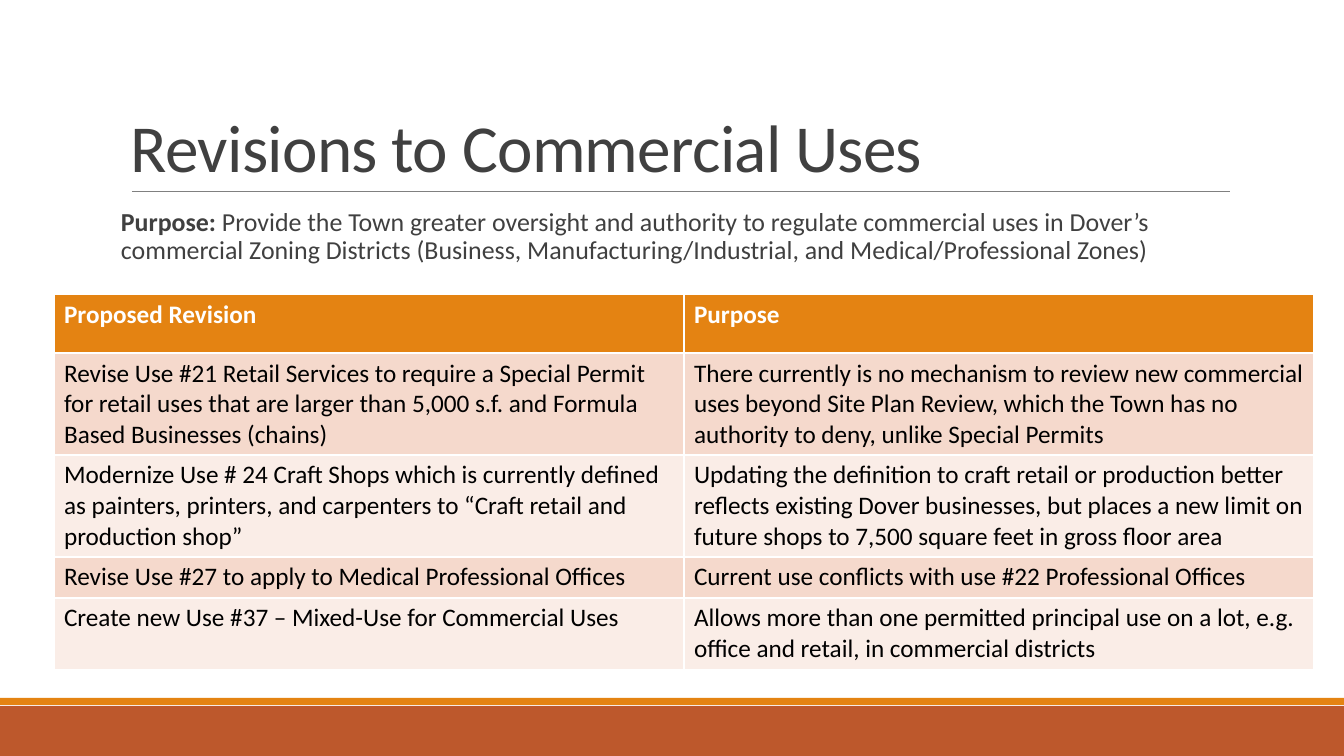
from lxml import etree
from pptx import Presentation
from pptx.dml.color import RGBColor
from pptx.enum.shapes import MSO_CONNECTOR, MSO_SHAPE
from pptx.enum.text import MSO_ANCHOR
from pptx.oxml.ns import qn
from pptx.util import Pt

STRAIGHT = MSO_CONNECTOR.STRAIGHT
RECTANGLE = MSO_SHAPE.RECTANGLE
BOTTOM = MSO_ANCHOR.BOTTOM

WHITE = RGBColor(0xFF, 0xFF, 0xFF)
BLACK = RGBColor(0, 0, 0)
CHARCOAL = RGBColor(0x40, 0x40, 0x40)
GRAY = RGBColor(0x80, 0x80, 0x80)
ORANGE = RGBColor(0xE4, 0x83, 0x12)
RUST = RGBColor(0xBD, 0x58, 0x2C)
DARK_BAND = RGBColor(0xF5, 0xD9, 0xCC)
LIGHT_BAND = RGBColor(0xFA, 0xED, 0xE7)
FONT = "Calibri"


def px(length):
    return round(length * 914400 / 100.8)


def add_run(paragraph, text, size, color, bold=False):
    run = paragraph.add_run()
    run.text = text
    run.font.name = FONT
    run.font.size = Pt(size)
    run.font.bold = bold
    run.font.color.rgb = color
    return run


prs = Presentation()
prs.slide_width = px(1344)
prs.slide_height = px(756)
slide = prs.slides.add_slide(prs.slide_layouts[6])
shapes = slide.shapes

for top, height, color in [(706, 50, RUST), (698, 7, ORANGE)]:
    footer_band = shapes.add_shape(RECTANGLE, 0, px(top), px(1344), px(height))
    footer_band.shadow.inherit = False
    footer_band.fill.solid()
    footer_band.fill.fore_color.rgb = color
    footer_band.line.fill.background()

title_rule = shapes.add_connector(STRAIGHT, px(132), px(191), px(1230), px(191))
title_rule.line.color.rgb = GRAY
title_rule.line.width = Pt(0.5)
etree.SubElement(title_rule._element.spPr, qn("a:effectLst"))

title = shapes.add_textbox(px(121), px(31), px(1109), px(160)).text_frame
title.word_wrap = True
title.vertical_anchor = BOTTOM
title.paragraphs[0].line_spacing = 0.85
title_run = add_run(title.paragraphs[0], "Revisions to Commercial Uses", 48, CHARCOAL)
title_run.font._element.set("spc", "-50")

purpose = shapes.add_textbox(px(121), px(204), px(1109), px(93)).text_frame
purpose.word_wrap = True
purpose.margin_left = purpose.margin_right = 0
summary = purpose.paragraphs[0]
summary.line_spacing = 0.9
summary.space_before = Pt(12)
summary.space_after = Pt(2)
add_run(summary, "Purpose: ", 18.5, CHARCOAL, True)
add_run(
    summary,
    "Provide the Town greater oversight and authority to regulate commercial uses in Dover’s "
    "commercial Zoning Districts (Business, Manufacturing/Industrial, and Medical/Professional Zones)",
    18.5,
    CHARCOAL,
)

revisions = [
    (59, "Proposed Revision", "Purpose"),
    (
        102,
        "Revise Use #21 Retail Services to require a Special Permit for retail uses "
        "that are larger than 5,000 s.f. and Formula Based Businesses (chains)",
        "There currently is no mechanism to review new commercial uses beyond Site Plan Review, "
        "which the Town has no authority to deny, unlike Special Permits",
    ),
    (
        102,
        "Modernize Use # 24 Craft Shops which is currently defined as painters, printers, "
        "and carpenters to “Craft retail and production shop”",
        "Updating the definition to craft retail or production better reflects existing Dover "
        "businesses, but places a new limit on future shops to 7,500 square feet in gross floor area",
    ),
    (
        41,
        "Revise Use #27 to apply to Medical Professional Offices",
        "Current use conflicts with use #22 Professional Offices",
    ),
    (
        72,
        "Create new Use #37 – Mixed-Use for Commercial Uses",
        "Allows more than one permitted principal use on a lot, e.g. office and retail, "
        "in commercial districts",
    ),
]
table_height = sum(height for height, *_ in revisions)
table = shapes.add_table(
    len(revisions), 2, px(54), px(294), px(1260), px(table_height)
).table
for column in table.columns:
    column.width = px(630)

for row, (height, *texts) in enumerate(revisions):
    table.rows[row].height = px(height)
    header = row == 0
    band = ORANGE if header else DARK_BAND if row % 2 else LIGHT_BAND
    for column, text in enumerate(texts):
        cell = table.cell(row, column)
        cell.fill.solid()
        cell.fill.fore_color.rgb = band
        add_run(cell.text_frame.paragraphs[0], text, 18, WHITE if header else BLACK, header)

prs.save("out.pptx")
